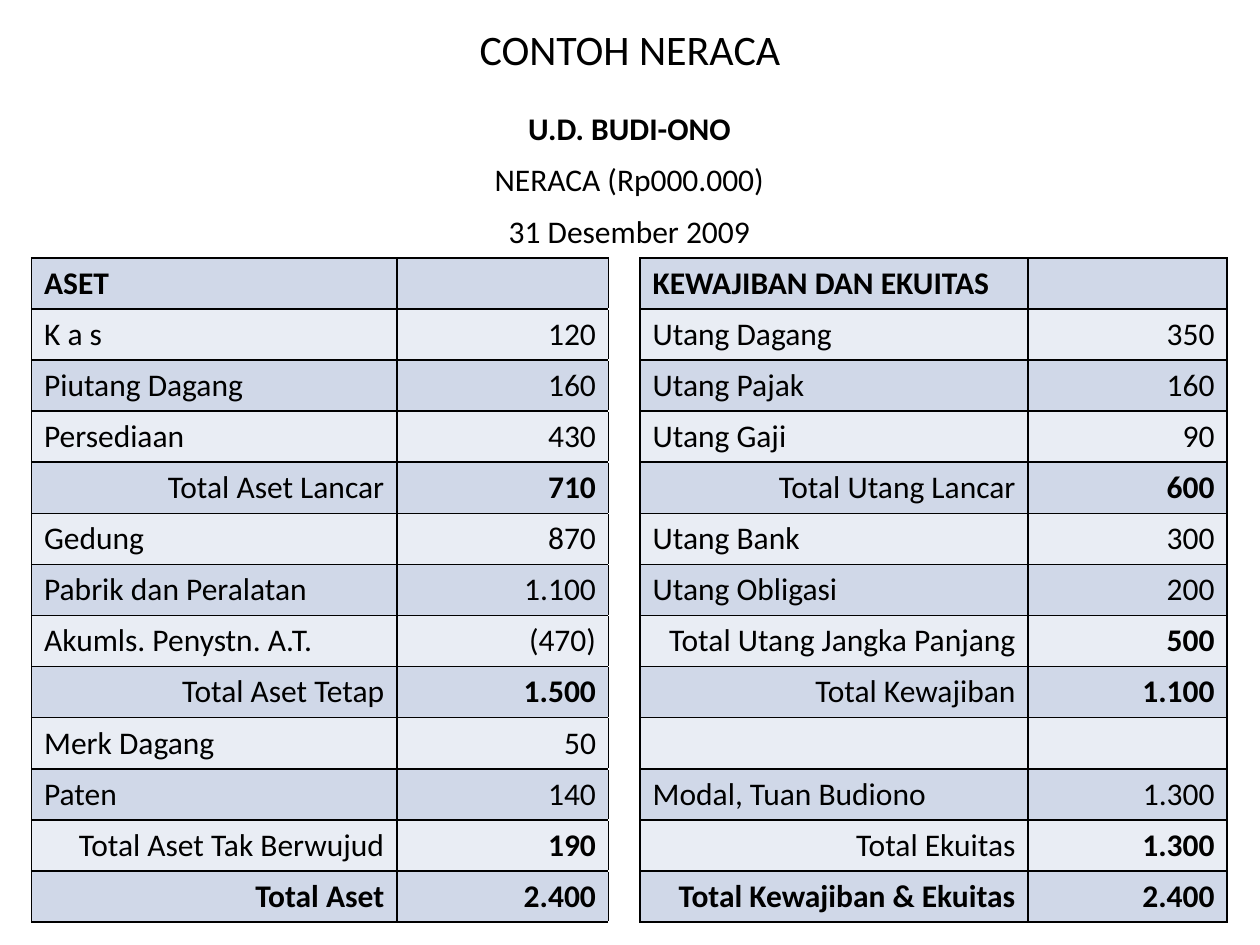
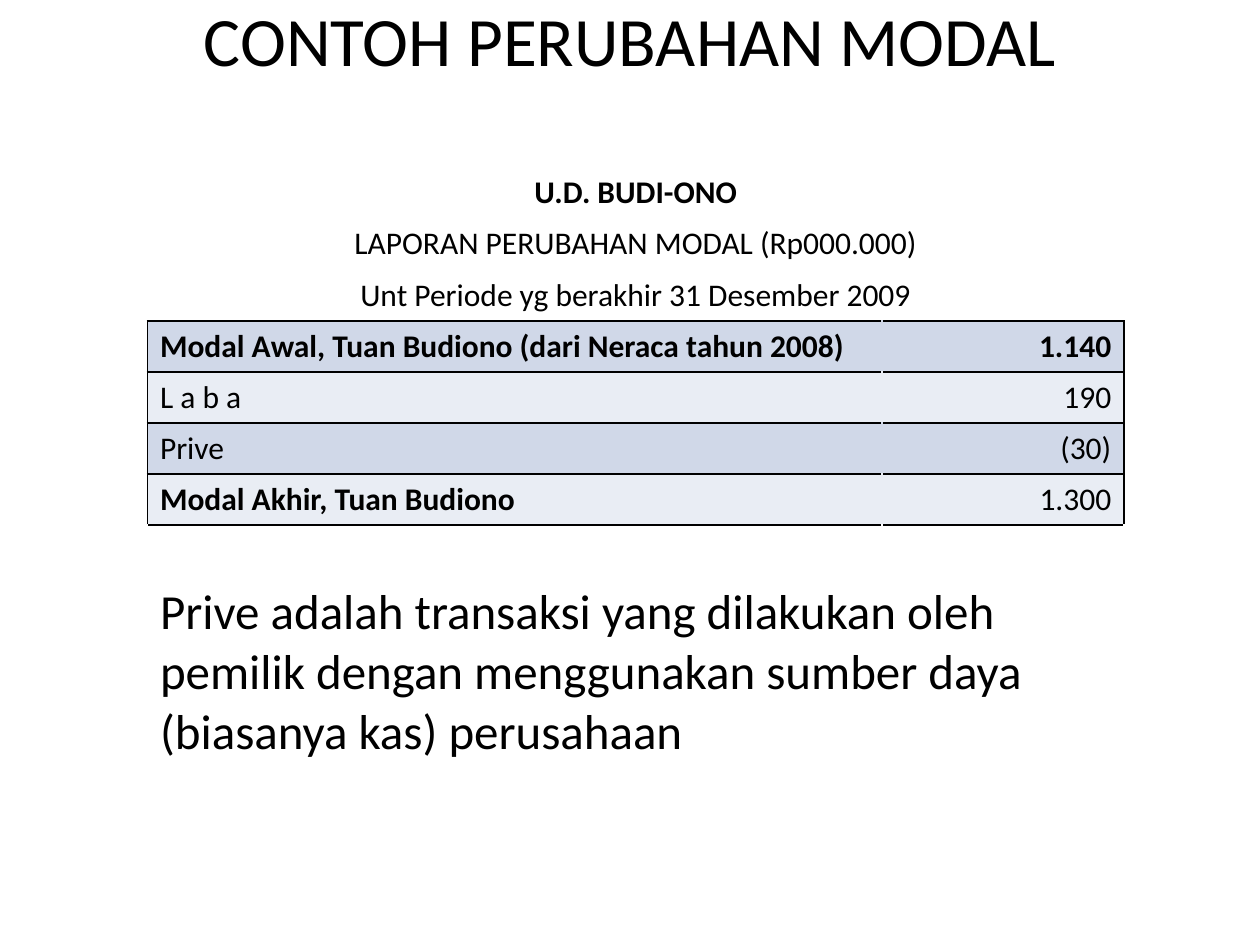
import pptx
import pptx.util
import pptx.dml.color
import pptx.enum.text
import pptx.oxml.ns
from lxml import etree

Inches = pptx.util.Inches
ALIGN = pptx.enum.text.PP_ALIGN
COLORS = {"text": "000000", "line": "000000", "page": "FFFFFF",
          "dark_band": "D0D8E8", "light_band": "E9EDF4"}
SIDES = "lrtb"
ROW_HEIGHT = 6.49 / 16

BALANCE_ROWS = [
    ("ASET", "", "KEWAJIBAN DAN EKUITAS", ""),
    ("K a s", "120", "Utang Dagang", "350"),
    ("Piutang Dagang", "160", "Utang Pajak", "160"),
    ("Persediaan", "430", "Utang Gaji", "90"),
    ("Total Aset Lancar", "710", "Total Utang Lancar", "600"),
    ("Gedung", "870", "Utang Bank", "300"),
    ("Pabrik dan Peralatan", "1.100", "Utang Obligasi", "200"),
    ("Akumls. Penystn. A.T.", "(470)", "Total Utang Jangka Panjang", "500"),
    ("Total Aset Tetap", "1.500", "Total Kewajiban", "1.100"),
    ("Merk Dagang", "50", "", ""),
    ("Paten", "140", "Modal, Tuan Budiono", "1.300"),
    ("Total Aset Tak Berwujud", "190", "Total Ekuitas", "1.300"),
    ("Total Aset", "2.400", "Total Kewajiban & Ekuitas", "2.400"),
]
CAPITAL_ROWS = [
    ("Modal Awal, Tuan Budiono (dari Neraca tahun 2008)", True, "1.140", True),
    ("L a b a", False, "190", False),
    ("Prive", False, "(30)", False),
    ("Modal Akhir, Tuan Budiono", True, "1.300", False),
]


def rgb(name):
    return pptx.dml.color.RGBColor.from_string(COLORS[name])


def band(index):
    return "light_band" if index % 2 else "dark_band"


class Deck:
    def __init__(self):
        self.prs = pptx.Presentation()
        self.prs.slide_width = Inches(10)
        self.prs.slide_height = Inches(7.5)
        self.s = None

    def slide(self):
        self.s = self.prs.slides.add_slide(self.prs.slide_layouts[6])

    def text(self, tf, text, size=18, bold=False, align=ALIGN.LEFT):
        p = tf.paragraphs[0]
        p.alignment = align
        if text:
            r = p.add_run()
            r.text = text
            formats = {"name": "Calibri", "size": pptx.util.Pt(size), "bold": bold}
            for key, value in formats.items():
                setattr(r.font, key, value)
            r.font.color.rgb = rgb("text")

    def title(self, text, size, height):
        tf = self.s.shapes.add_textbox(Inches(0.5), 0, Inches(9), Inches(height)).text_frame
        tf.word_wrap = True
        tf.vertical_anchor = pptx.enum.text.MSO_ANCHOR.MIDDLE
        self.text(tf, text, size, align=ALIGN.CENTER)

    def table(self, left, top, widths, heights):
        sp = self.s.shapes.add_table(len(heights), len(widths), Inches(left), Inches(top),
                                     Inches(sum(widths)), Inches(sum(heights)))
        table = sp.table
        table.first_row = table.horz_banding = False
        for column, width in zip(table.columns, widths):
            column.width = Inches(width)
        for row, height in zip(table.rows, heights):
            row.height = Inches(height)
        return table

    def cell(self, cell, text="", fill="page", lines="", **formats):
        qn = pptx.oxml.ns.qn
        properties = cell._tc.get_or_add_tcPr()
        for side in SIDES:
            ln = etree.SubElement(properties, qn(f"a:ln{side.upper()}"), w="12700")
            color = COLORS["line" if side in lines else fill]
            etree.SubElement(etree.SubElement(ln, qn("a:solidFill")), qn("a:srgbClr"), val=color)
        cell.fill.solid()
        cell.fill.fore_color.rgb = rgb(fill)
        self.text(cell.text_frame, text, **formats)

    def merged_row(self, table, row, text, lines="", **formats):
        last = len(table.columns) - 1
        table.cell(row, 0).merge(table.cell(row, last))
        for column in range(last + 1):
            self.cell(table.cell(row, column), "" if column else text, lines=lines, **formats)

    def heading(self, table, *captions):
        for row, caption in enumerate(captions):
            last = row == len(captions) - 1
            self.merged_row(table, row, caption, "b" if last else "",
                            bold=row == 0, align=ALIGN.CENTER)

    def account(self, table, row, column, label, value, fill, strong):
        total = label.startswith("Total")
        self.cell(table.cell(row, column), label, fill, SIDES, bold=strong,
                  align=ALIGN.RIGHT if total else ALIGN.LEFT)
        self.cell(table.cell(row, column + 1), value, fill, SIDES, bold=total,
                  align=ALIGN.RIGHT)


def balance_sheet(deck):
    deck.slide()
    deck.title("CONTOH NERACA", 24, 0.78)
    table = deck.table(0.25, 0.83, [2.9, 1.68, 0.25, 3.08, 1.58], [ROW_HEIGHT] * 16)
    deck.heading(table, "U.D. BUDI-ONO", "NERACA (Rp000.000)", "31 Desember 2009")
    for i, (asset, amount, claim, claim_amount) in enumerate(BALANCE_ROWS):
        row = i + 3
        strong = i in (0, len(BALANCE_ROWS) - 1)
        deck.account(table, row, 0, asset, amount, band(i), strong)
        deck.cell(table.cell(row, 2), lines="lr")
        deck.account(table, row, 3, claim, claim_amount, band(i), strong)


def capital_changes(deck):
    deck.slide()
    deck.title("CONTOH PERUBAHAN MODAL", 39.6, 0.62)
    table = deck.table(1.17, 1.33, [5.83, 1.92], [ROW_HEIGHT] * 8 + [1.46])
    deck.heading(table, "U.D. BUDI-ONO", "LAPORAN PERUBAHAN MODAL (Rp000.000)",
                 "Unt Periode yg berakhir 31 Desember 2009")
    for i, (label, label_bold, value, value_bold) in enumerate(CAPITAL_ROWS):
        deck.cell(table.cell(i + 3, 0), label, band(i), "ltb", bold=label_bold)
        deck.cell(table.cell(i + 3, 1), value, band(i), "rtb", bold=value_bold,
                  align=ALIGN.RIGHT)
    for column in range(2):
        deck.cell(table.cell(7, column), lines="t")
    deck.merged_row(table, 8, "Prive adalah transaksi yang dilakukan oleh pemilik dengan "
                    "menggunakan sumber daya (biasanya kas) perusahaan", size=28)


def main():
    deck = Deck()
    balance_sheet(deck)
    capital_changes(deck)
    deck.prs.save("out.pptx")


if __name__ == "__main__":
    main()
